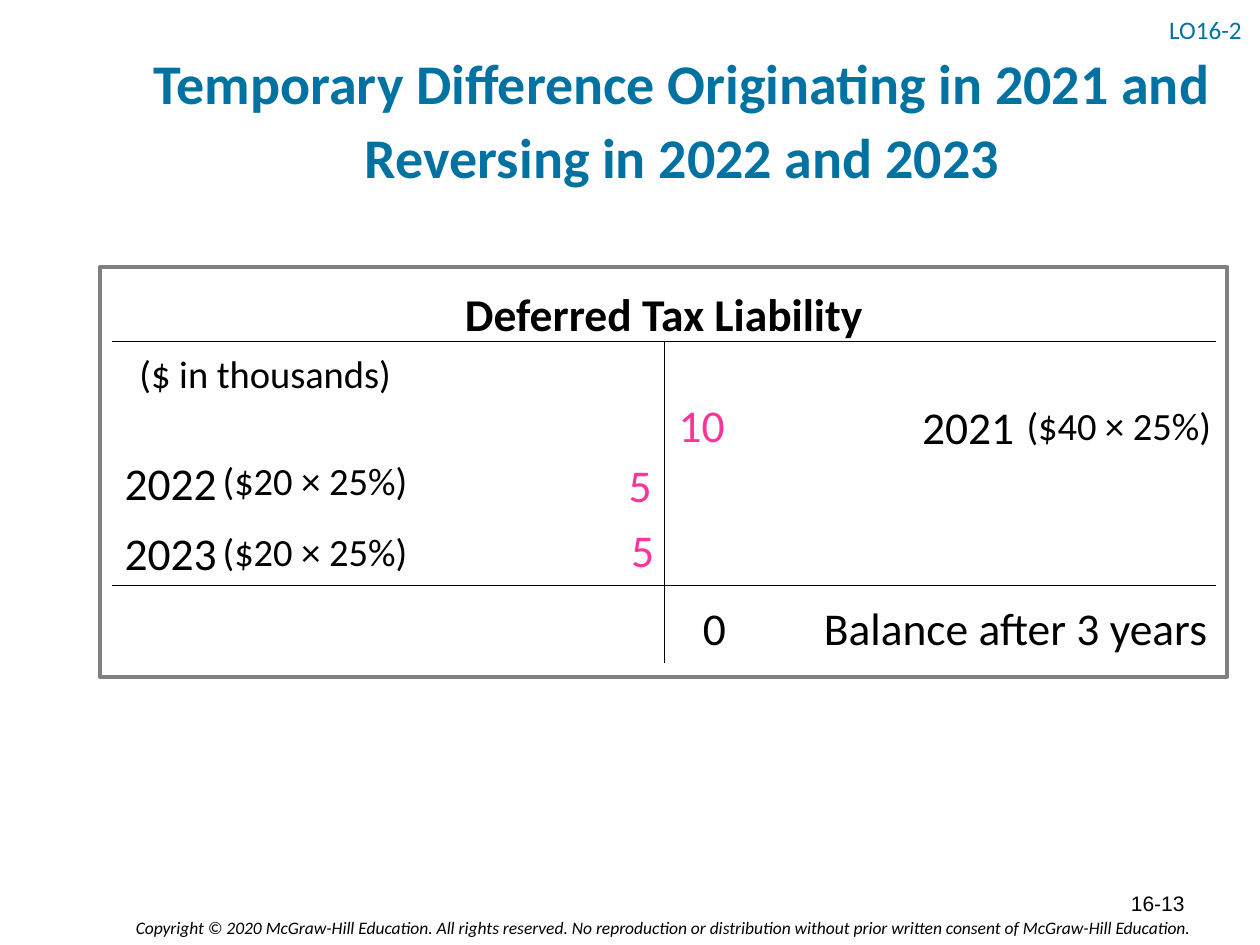
from pptx import Presentation
from pptx.dml.color import RGBColor
from pptx.enum.shapes import MSO_CONNECTOR, MSO_SHAPE
from pptx.enum.text import MSO_ANCHOR, PP_ALIGN
from pptx.oxml.ns import qn
from pptx.util import Inches, Pt
from lxml import etree

BLACK = RGBColor(0x00, 0x00, 0x00)
BLUE = RGBColor(0x00, 0x72, 0xA2)
PINK = RGBColor(0xFF, 0x33, 0x99)
GRAY = RGBColor(0x80, 0x80, 0x80)
LEFT, CENTER, RIGHT = PP_ALIGN.LEFT, PP_ALIGN.CENTER, PP_ALIGN.RIGHT
TOP, MIDDLE = MSO_ANCHOR.TOP, MSO_ANCHOR.MIDDLE
STRAIGHT = MSO_CONNECTOR.STRAIGHT

prs = Presentation()
prs.slide_width = Inches(10)
prs.slide_height = Inches(7.5)
slide = prs.slides.add_slide(prs.slide_layouts[6])


def add_text(text, left, top, width, height, size, align=LEFT, color=BLACK,
             anchor=TOP, spacing=1.0, **font_format):
    box = slide.shapes.add_textbox(
        Inches(left), Inches(top), Inches(width), Inches(height))
    frame = box.text_frame
    frame.word_wrap = True
    frame.vertical_anchor = anchor
    paragraph = frame.paragraphs[0]
    paragraph.alignment = align
    paragraph.line_spacing = spacing
    run = paragraph.add_run()
    run.text = text
    values = {"name": "Calibri", "size": Pt(size), **font_format}
    for attribute, value in values.items():
        setattr(run.font, attribute, value)
    run.font.color.rgb = color


add_text("Copyright © 2020 McGraw-Hill Education. All rights reserved. "
         "No reproduction or distribution without prior written consent of "
         "McGraw-Hill Education.",
         0.45, 7.23, 9.09, 0.27, 10, RIGHT, italic=True)
add_text("Temporary Difference Originating in 2021 and Reversing in 2022 and 2023",
         0.83, 0.13, 9.17, 1.58, 32, CENTER, BLUE, MIDDLE, 1.1, bold=True)
add_text("LO16-2", 9.18, 0.06, 0.81, 0.4, 14.4, LEFT, BLUE, MIDDLE, 0.7)

add_text("Deferred Tax Liability", 3.3, 2.22, 3.94, 0.54, 26, CENTER, bold=True)
add_text("($ in thousands)", 0.89, 2.73, 2.43, 0.44, 22, CENTER)

account_left, account_right, account_middle = 0.89, 9.65, 5.27
header_y, balance_y, stem_end = 2.71, 4.65, 5.26
for x1, y1, x2, y2 in (
    (account_left, header_y, account_right, header_y),
    (account_middle, header_y, account_middle, stem_end),
    (account_left, balance_y, account_right, balance_y),
):
    rule = slide.shapes.add_connector(
        STRAIGHT, Inches(x1), Inches(y1), Inches(x2), Inches(y2))
    rule.line.color.rgb = BLACK
    rule.line.width = Pt(0.5)
    etree.SubElement(rule._element.spPr, qn("a:effectLst"))

entries = (
    ("2021", 7.22, 3.12, "($40 × 25%)", 8, "10", 5.28, 3.1),
    ("2022", 0.89, 3.56, "($20 × 25%)", 1.62, "5", 4.7, 3.57),
    ("2023", 0.89, 4.12, "($20 × 25%)", 1.62, "5", 4.72, 4.09),
)
for year, year_x, year_y, formula, formula_x, amount, amount_x, amount_y in entries:
    add_text(year, year_x, year_y, 1.17, 0.54, 26)
    add_text(formula, formula_x, year_y + 0.02, 1.76, 0.47, 22, CENTER)
    add_text(amount, amount_x, amount_y, 0.57, 0.54, 26, RIGHT, PINK, MIDDLE)

add_text("Balance after 3 years", 6.44, 4.71, 3.31, 0.54, 26)
add_text("0", 5.29, 4.71, 0.57, 0.54, 26, RIGHT, anchor=MIDDLE)

account_frame = slide.shapes.add_shape(
    MSO_SHAPE.RECTANGLE, Inches(0.79), Inches(2.12), Inches(8.95), Inches(3.25))
account_frame.shadow.inherit = False
account_frame.fill.background()
account_frame.line.color.rgb = GRAY
account_frame.line.width = Pt(2.25)

add_text("16-13", 7.17, 6.97, 2.33, 0.4, 12, RIGHT, anchor=MIDDLE, name="Arial")

prs.save("out.pptx")
